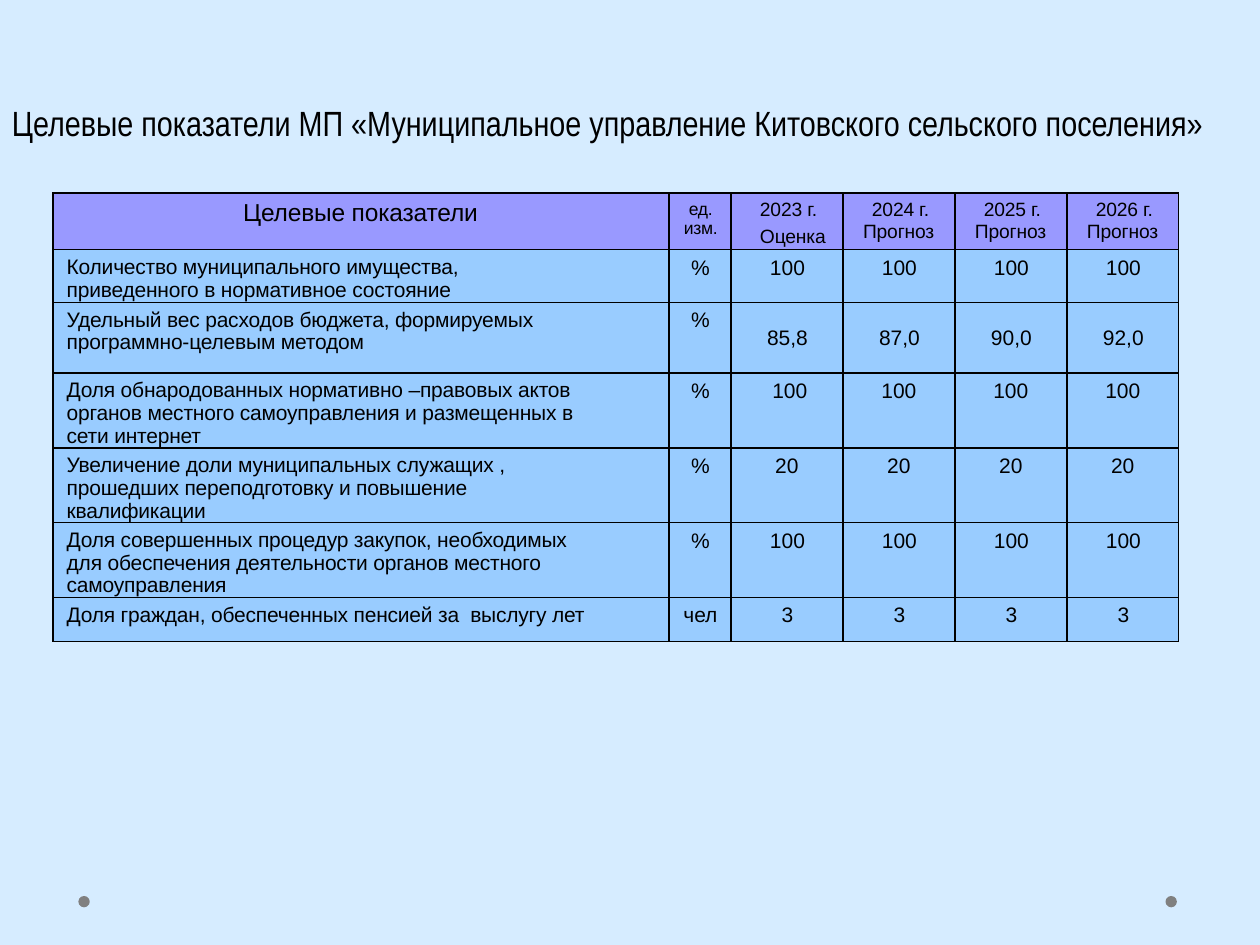
"""Build the slide of target indicators for a municipal programme."""
from dataclasses import dataclass
from typing import Any

from lxml import etree
from pptx import Presentation
from pptx import util as u
from pptx.dml.color import RGBColor
from pptx.enum import shapes, text
from pptx.oxml.ns import qn


@dataclass(frozen=True)
class Theme:
    background: str = "D6ECFF"
    header: str = "9999FF"
    body: str = "99CCFF"
    ink: str = "000000"
    dot: str = "808080"
    font: str = "Arial"
    title_font: str = "Arial Narrow"
    title_size: float = 20
    heading_size: float = 14
    body_size: float = 12
    year_size: float = 11
    unit_size: float = 10


@dataclass(frozen=True)
class Indicator:
    label: str
    unit: str
    values: tuple[str, ...]
    height: float = 30.2
    first_indent: float = 0
    middle: bool = False


THEME = Theme()
CENTER = text.PP_ALIGN.CENTER
COLUMN_WIDTHS = (352, 35.5, 64, 64, 64, 64)
HEADER_HEIGHT = 32.4
YEARS = (("2023 г.", "Оценка"), ("2024 г.", "Прогноз"),
         ("2025 г.", "Прогноз"), ("2026 г.", "Прогноз"))
INDICATORS = (
    Indicator("Количество муниципального имущества, приведенного в нормативное состояние",
              "%", ("100",) * 4),
    Indicator("Удельный вес расходов бюджета, формируемых программно-целевым методом",
              "%", ("85,8", "87,0", "90,0", "92,0"), height=40.3, middle=True),
    Indicator("Доля обнародованных нормативно –правовых актов органов местного "
              "самоуправления и размещенных в сети интернет",
              "%", (" 100", "100", "100", "100"), first_indent=-16),
    Indicator("Увеличение доли муниципальных служащих , прошедших переподготовку "
              "и повышение квалификации", "%", ("20",) * 4, first_indent=-16),
    Indicator("Доля совершенных процедур закупок, необходимых для обеспечения "
              "деятельности органов местного самоуправления", "%", ("100",) * 4),
    Indicator("Доля граждан, обеспеченных пенсией за  выслугу лет",
              "чел", ("3",) * 4, height=25.2),
)


def color(value: str) -> RGBColor:
    """Turn a hex string into a colour."""
    return RGBColor.from_string(value)


def write(frame: Any, content: str, *, size: float = THEME.body_size, font: str = THEME.font,
          align: Any = text.PP_ALIGN.LEFT, left: float = 0, right: float = 0,
          indent: float = 0, before: float = 0, spacing: float | None = None,
          tracking: float = 0, append: bool = False) -> None:
    """Write one formatted paragraph into a text frame."""
    paragraph = frame.add_paragraph() if append else frame.paragraphs[0]
    paragraph.alignment = align
    paragraph.space_before = u.Pt(before)
    if spacing:
        paragraph.line_spacing = spacing
    margins = paragraph._p.get_or_add_pPr()
    for name, length in (("marL", left), ("marR", right), ("indent", indent)):
        margins.set(name, str(u.Pt(length)))
    run = paragraph.add_run()
    run.text = content
    run.font.size = u.Pt(size)
    run.font.name = font
    run.font.color.rgb = color(THEME.ink)
    if tracking:
        run._r.get_or_add_rPr().set("spc", str(round(tracking * 100)))


def style_cell(cell: Any, fill: str, middle: bool = False) -> Any:
    """Set margins, borders and fill of a cell and return its text frame."""
    side, top = (5, 0) if middle else (0, 3.6)
    cell.margin_left = cell.margin_right = u.Pt(side)
    cell.margin_top, cell.margin_bottom = u.Pt(top), u.Pt(0)
    cell.vertical_anchor = text.MSO_ANCHOR.MIDDLE if middle else text.MSO_ANCHOR.TOP
    properties = cell._tc.get_or_add_tcPr()
    for edge in ("lnL", "lnR", "lnT", "lnB"):
        border = etree.SubElement(properties, qn(f"a:{edge}"), w=str(u.Pt(1)))
        solid = etree.SubElement(border, qn("a:solidFill"))
        etree.SubElement(solid, qn("a:srgbClr"), val=THEME.ink)
    cell.fill.solid()
    cell.fill.fore_color.rgb = color(fill)
    return cell.text_frame


def draw_header(table: Any) -> None:
    """Fill the heading row."""
    frames = [style_cell(cell, THEME.header) for cell in table.rows[0].cells]
    write(frames[0], "Целевые показатели", size=THEME.heading_size, left=108.7,
          before=3.1, tracking=-0.1)
    write(frames[1], "ед. изм.", size=THEME.unit_size, left=8.6, indent=2.9,
          before=3.3, tracking=-0.1)
    for frame, (year, status) in zip(frames[2:], YEARS):
        estimate = status == "Оценка"
        write(frame, year, size=THEME.year_size, left=16.6, before=3.2, tracking=-0.1)
        write(frame, status, size=THEME.year_size, left=16.6 if estimate else 11.5,
              before=3.2 if estimate else 0, tracking=-0.1, append=True)


def draw_indicator(table: Any, row: int, indicator: Indicator) -> None:
    """Fill one row of indicator values."""
    table.rows[row].height = u.Pt(indicator.height)
    label, unit, *values = table.rows[row].cells
    write(style_cell(label, THEME.body), indicator.label, left=7.9, right=46,
          before=3.3, spacing=0.97, tracking=-0.1)
    write(style_cell(unit, THEME.body), indicator.unit, align=CENTER, left=0.7, before=3.3)
    for cell, value in zip(values, indicator.values):
        write(style_cell(cell, THEME.body, indicator.middle), value, align=CENTER,
              left=0.7, indent=indicator.first_indent, before=3.3)


def draw_dot(slide: Any, left: float) -> None:
    """Draw a footer dot."""
    dot = slide.shapes.add_shape(shapes.MSO_SHAPE.OVAL, u.Pt(left), u.Pt(512),
                                 u.Pt(6.5), u.Pt(6.5))
    dot.shadow.inherit = False
    dot.fill.solid()
    dot.fill.fore_color.rgb = color(THEME.dot)
    dot.line.fill.background()


def main() -> None:
    """Build and save the slide."""
    deck = Presentation()
    deck.slide_width, deck.slide_height = u.Pt(720), u.Pt(540)
    slide = deck.slides.add_slide(deck.slide_layouts[6])
    slide.background.fill.solid()
    slide.background.fill.fore_color.rgb = color(THEME.background)
    for left in (666, 44.8):
        draw_dot(slide, left)

    indicators_frame = slide.shapes.add_table(
        len(INDICATORS) + 1, len(COLUMN_WIDTHS), u.Pt(30.2), u.Pt(110.3),
        u.Pt(sum(COLUMN_WIDTHS)), u.Pt(270))
    table = indicators_frame.table
    for column, width in zip(table.columns, COLUMN_WIDTHS):
        column.width = u.Pt(width)
    table.rows[0].height = u.Pt(HEADER_HEIGHT)
    draw_header(table)
    for row, indicator in enumerate(INDICATORS, start=1):
        draw_indicator(table, row, indicator)

    title = slide.shapes.add_textbox(u.Pt(-2.2), u.Pt(54.7), u.Pt(699), u.Pt(40.3))
    title.text_frame.word_wrap = True
    write(title.text_frame,
          "Целевые показатели МП «Муниципальное управление Китовского сельского поселения»",
          size=THEME.title_size, font=THEME.title_font, align=CENTER)
    deck.save("out.pptx")


if __name__ == "__main__":
    main()
